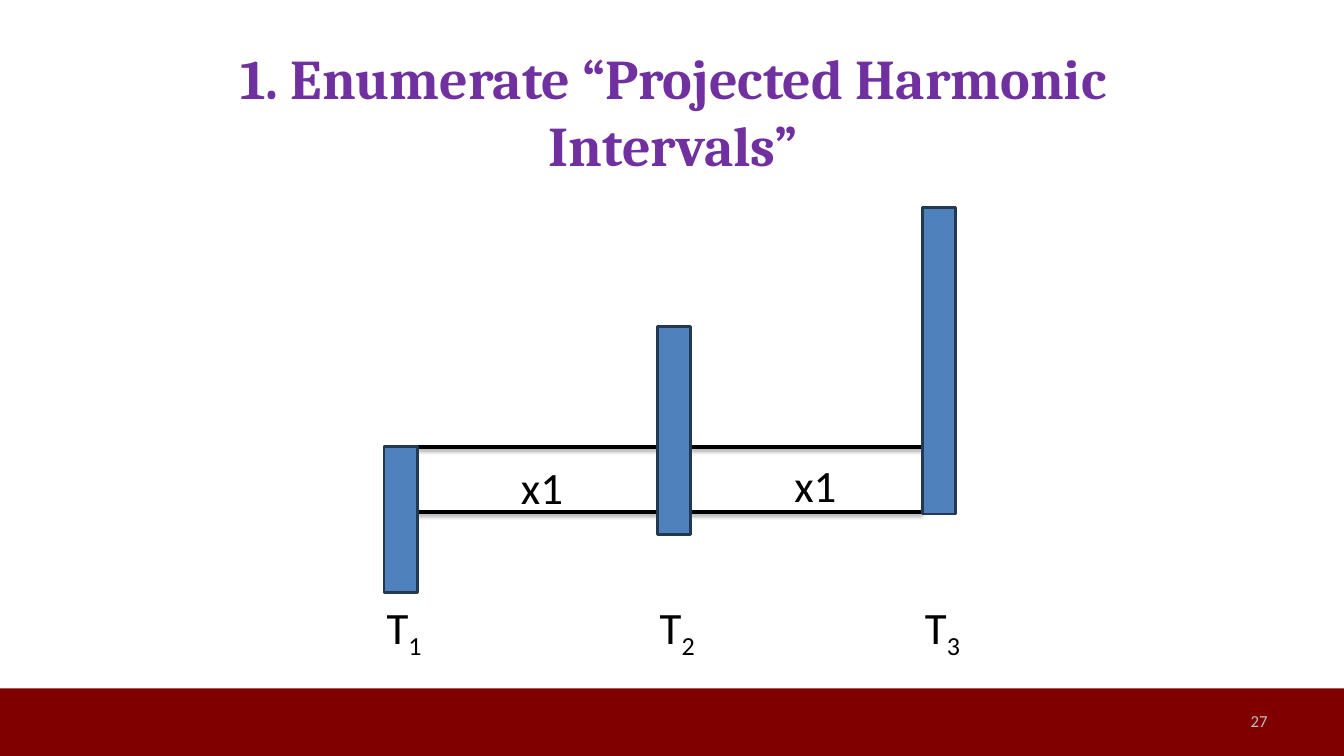
from lxml import etree
from pptx import Presentation
from pptx.dml.color import RGBColor
from pptx.enum.shapes import MSO_CONNECTOR, MSO_SHAPE
from pptx.enum.text import MSO_ANCHOR, PP_ALIGN
from pptx.oxml.ns import qn
from pptx.util import Inches, Pt

RECT = MSO_SHAPE.RECTANGLE
STRAIGHT = MSO_CONNECTOR.STRAIGHT
TOP, MIDDLE = MSO_ANCHOR.TOP, MSO_ANCHOR.MIDDLE
LEFT, CENTER, RIGHT = PP_ALIGN.LEFT, PP_ALIGN.CENTER, PP_ALIGN.RIGHT

WIDTH, HEIGHT = Inches(13.33), Inches(7.5)

# All positions are percentages of the slide's width or height.
BAR_WIDTH = 2.5
BARS = [(28.58, 59.07, 19.33), (48.9, 43.2, 27.47), (68.63, 27.47, 40.53)]
INTERVAL_EDGES = (59.13, 67.73)
INTERVAL_LABELS = [(38.03, 60.13), (58.36, 59.87)]
LABEL_TOP, LABEL_HEIGHT = 78.67, 8.53


def x(share):
    return int(WIDTH * share / 100)


def y(share):
    return int(HEIGHT * share / 100)


def color(value):
    return RGBColor.from_string(value)


def add_rect(s, left, top, width, height, fill, line=None):
    sp = s.shapes.add_shape(RECT, x(left), y(top), x(width), y(height))
    sp.shadow.inherit = False
    sp.fill.solid()
    sp.fill.fore_color.rgb = color(fill)
    if line:
        sp.line.color.rgb = color(line)
        sp.line.width = Pt(2)
    else:
        sp.line.fill.background()


def add_text(s, left, top, width, height, text, size=32, font="Calibri",
             fill="000000", bold=False, align=LEFT, anchor=TOP, wrap=False):
    sp = s.shapes.add_textbox(x(left), y(top), x(width), y(height))
    tf = sp.text_frame
    tf.word_wrap = wrap
    tf.vertical_anchor = anchor
    p = tf.paragraphs[0]
    p.text = text
    p.alignment = align
    p.font.size = Pt(size)
    p.font.name = font
    p.font.bold = bold
    p.font.color.rgb = color(fill)
    for r in p.runs:
        r.font.size = Pt(size)
        r.font.name = font
        r.font.bold = bold
        r.font.color.rgb = color(fill)
    return p


def add_bar_label(s, left, number):
    p = add_text(s, left - 0.55, LABEL_TOP, 4.3, LABEL_HEIGHT, "T")
    r = p.add_run()
    r.text = str(number)
    r.font.size = Pt(32)
    r.font.name = "Calibri"
    r.font.color.rgb = color("000000")
    r.font._element.set("baseline", "-25000")


def add_shadow(sp):
    effects = etree.SubElement(sp._element.spPr, qn("a:effectLst"))
    shadow = etree.SubElement(effects, qn("a:outerShdw"), blurRad=str(Pt(3.1)),
                              dist=str(Pt(1.8)), dir="5400000", rotWithShape="0")
    black = etree.SubElement(shadow, qn("a:srgbClr"), val="000000")
    etree.SubElement(black, qn("a:alpha"), val="35000")


def add_interval(s, start, end):
    """Draw the two horizontal edges between neighbouring bars."""
    for edge in INTERVAL_EDGES:
        sp = s.shapes.add_connector(STRAIGHT, x(start), y(edge), x(end), y(edge))
        sp.line.color.rgb = color("000000")
        sp.line.width = Pt(3)
        add_shadow(sp)


def main():
    prs = Presentation()
    prs.slide_width, prs.slide_height = WIDTH, HEIGHT
    s = prs.slides.add_slide(prs.slide_layouts[6])

    add_rect(s, 0, 91.07, 100, 8.93, "800000")
    add_text(s, 71.72, 92.67, 23.33, 5.33, "27", size=12, fill="BFBFBF",
             align=RIGHT, anchor=MIDDLE, wrap=True)
    add_text(s, 12.6, 5.07, 75, 19.33, "1. Enumerate “Projected Harmonic Intervals”",
             size=40, font="Cambria", fill="7030A0", bold=True,
             align=CENTER, wrap=True)

    for bar, following in zip(BARS, BARS[1:]):
        add_interval(s, bar[0] + BAR_WIDTH, following[0])
    for number, (left, top, height) in enumerate(BARS, 1):
        add_rect(s, left, top, BAR_WIDTH, height, "4F81BD", "233953")
        add_bar_label(s, left, number)
    for left, top in INTERVAL_LABELS:
        add_text(s, left, top, 4.65, LABEL_HEIGHT, "x1")

    prs.save("out.pptx")


if __name__ == "__main__":
    main()
